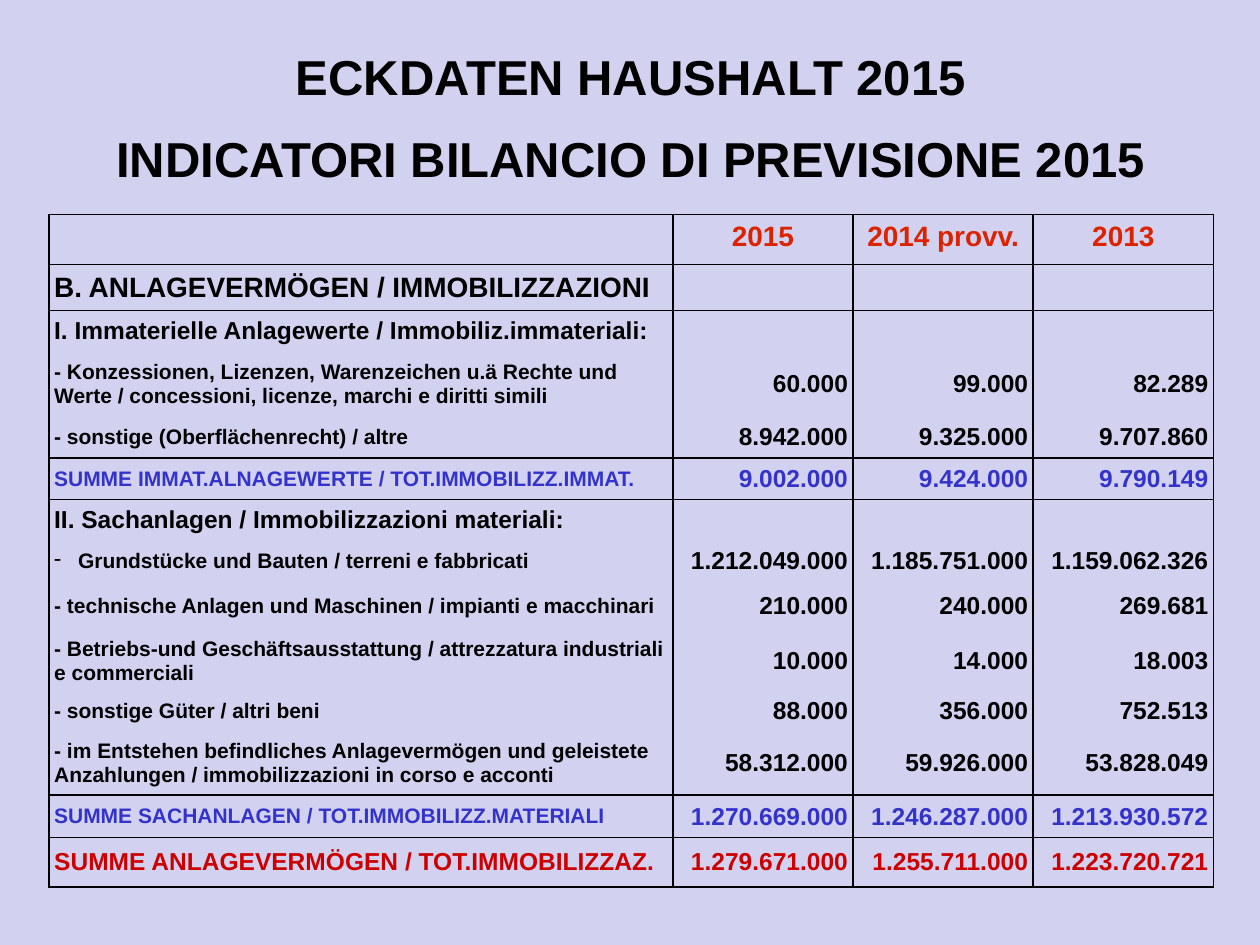
from dataclasses import dataclass

from lxml.etree import SubElement
from pptx import Presentation
from pptx.dml.color import RGBColor as Color
from pptx.enum.text import MSO_ANCHOR as Anchor, PP_ALIGN as Align
from pptx.oxml.ns import qn
from pptx.util import Inches, Pt


@dataclass(frozen=True)
class Theme:
    font: str = "Arial"
    background: str = "D2D2F0"
    ink: str = "000000"
    year: str = "DC2300"
    subtotal: str = "3333CC"
    total: str = "CC0000"
    title_size: int = 28
    heading_size: int = 16
    body_size: int = 14
    item_size: int = 12
    title_gap: int = 13
    border: float = 1
    cell_margin: float = 0.04
    dash_indent: float = 0.19


THEME = Theme()

# Row kind: (label size, colour, line above the row)
KINDS = {
    "years": (THEME.heading_size, THEME.year, True),
    "chapter": (THEME.heading_size, THEME.ink, True),
    "section": (THEME.body_size, THEME.ink, True),
    "item": (THEME.item_size, THEME.ink, False),
    "dash": (THEME.item_size, THEME.ink, False),
    "subtotal": (THEME.item_size, THEME.subtotal, True),
    "total": (THEME.body_size, THEME.total, True),
}

# Kind, height in percent of the slide, label, values for 2015, 2014 and 2013
ROWS = [
    ("years", 5.3, "", "2015", "2014 provv.", "2013"),
    ("chapter", 4.9, "B. ANLAGEVERMÖGEN / IMMOBILIZZAZIONI", "", "", ""),
    ("section", 4.4, "I. Immaterielle Anlagewerte / Immobiliz.immateriali:", "", "", ""),
    ("item", 6.8, "- Konzessionen, Lizenzen, Warenzeichen u.ä Rechte und Werte / "
     "concessioni, licenze, marchi e diritti simili", "60.000", "99.000", "82.289"),
    ("item", 4.4, "- sonstige (Oberflächenrecht) / altre",
     "8.942.000", "9.325.000", "9.707.860"),
    ("subtotal", 4.4, "SUMME IMMAT.ALNAGEWERTE / TOT.IMMOBILIZZ.IMMAT.",
     "9.002.000", "9.424.000", "9.790.149"),
    ("section", 4.4, "II. Sachanlagen / Immobilizzazioni materiali:", "", "", ""),
    ("dash", 4.3, "Grundstücke und Bauten / terreni e fabbricati",
     "1.212.049.000", "1.185.751.000", "1.159.062.326"),
    ("item", 5.2, "- technische Anlagen und Maschinen / impianti e macchinari",
     "210.000", "240.000", "269.681"),
    ("item", 6.4, "- Betriebs-und Geschäftsausstattung / attrezzatura industriali "
     "e commerciali", "10.000", "14.000", "18.003"),
    ("item", 4.2, "- sonstige Güter / altri beni", "88.000", "356.000", "752.513"),
    ("item", 6.8, "- im Entstehen befindliches Anlagevermögen und geleistete "
     "Anzahlungen / immobilizzazioni in corso e acconti",
     "58.312.000", "59.926.000", "53.828.049"),
    ("subtotal", 4.5, "SUMME SACHANLAGEN / TOT.IMMOBILIZZ.MATERIALI",
     "1.270.669.000", "1.246.287.000", "1.213.930.572"),
    ("total", 5.2, "SUMME ANLAGEVERMÖGEN / TOT.IMMOBILIZZAZ.",
     "1.279.671.000", "1.255.711.000", "1.223.720.721"),
]
COLUMNS = [49.5, 14.3, 14.3, 14.3]


class SlideBuilder:
    """Places elements by percent of the slide's width and height."""

    def __init__(self, presentation, theme):
        self.theme = theme
        self.width = presentation.slide_width
        self.height = presentation.slide_height
        self.slide = presentation.slides.add_slide(presentation.slide_layouts[6])
        fill = self.slide.background.fill
        fill.solid()
        fill.fore_color.rgb = Color.from_string(theme.background)

    def x(self, percent):
        return round(self.width * percent / 100)

    def y(self, percent):
        return round(self.height * percent / 100)

    def set_text(self, paragraph, text, size, color, align):
        if text:
            paragraph.text = text
        paragraph.alignment = align
        font = paragraph.font
        font.name, font.size, font.bold = self.theme.font, Pt(size), True
        font.color.rgb = Color.from_string(color)

    def title(self, lines, left, top, width, height):
        box = self.slide.shapes.add_textbox(
            self.x(left), self.y(top), self.x(width), self.y(height))
        frame = box.text_frame
        frame.word_wrap = True
        for index, line in enumerate(lines):
            paragraph = frame.add_paragraph() if index else frame.paragraphs[0]
            self.set_text(paragraph, line, self.theme.title_size, self.theme.ink, Align.CENTER)
            if index:
                paragraph.space_before = Pt(self.theme.title_gap)

    def table(self, rows, columns, left, top):
        table = self.slide.shapes.add_table(
            len(rows), len(columns), self.x(left), self.y(top),
            self.x(sum(columns)), self.y(sum(row[1] for row in rows))).table
        table.first_row = table.horz_banding = False
        for column, width in zip(table.columns, columns):
            column.width = self.x(width)
        ruled = [KINDS[row[0]][2] for row in rows] + [True]
        for row_index, (kind, height, *texts) in enumerate(rows):
            table.rows[row_index].height = self.y(height)
            for column_index, text in enumerate(texts):
                cell = table.cell(row_index, column_index)
                self.cell(cell, kind, text, column_index == 0)
                self.borders(cell, ruled[row_index], ruled[row_index + 1])

    def cell(self, cell, kind, text, is_label):
        size, color, _ = KINDS[kind]
        align = Align.LEFT if is_label else Align.RIGHT
        if kind == "years":
            align = Align.CENTER
        elif not is_label:
            size = self.theme.body_size
        if not text:
            size = self.theme.item_size
        margin = Inches(self.theme.cell_margin)
        cell.margin_left = cell.margin_right = margin
        cell.margin_top = cell.margin_bottom = margin
        cell.vertical_anchor = Anchor.MIDDLE
        cell.fill.background()
        paragraph = cell.text_frame.paragraphs[0]
        self.set_text(paragraph, text, size, color, align)
        if kind == "years" and text:
            paragraph.line_spacing = 0.81
            paragraph.space_before = Pt(8)
        if kind == "dash" and is_label:
            self.dash(paragraph)

    def dash(self, paragraph):
        properties = paragraph._p.get_or_add_pPr()
        indent = Inches(self.theme.dash_indent)
        properties.set("marL", str(indent))
        properties.set("indent", str(-indent))
        bullet = properties.makeelement(qn("a:buChar"), {"char": "-"})
        properties.insert(0, bullet)

    def borders(self, cell, above, below):
        properties = cell._tc.get_or_add_tcPr()
        edges = {"a:lnL": True, "a:lnR": True, "a:lnT": above, "a:lnB": below}
        for position, (tag, visible) in enumerate(edges.items()):
            line = properties.makeelement(qn(tag), {"w": str(Pt(self.theme.border))})
            properties.insert(position, line)
            if visible:
                fill = SubElement(line, qn("a:solidFill"))
                SubElement(fill, qn("a:srgbClr"), val=self.theme.ink)
            else:
                SubElement(line, qn("a:noFill"))


def main():
    presentation = Presentation()
    presentation.slide_width, presentation.slide_height = Inches(10), Inches(7.5)
    builder = SlideBuilder(presentation, THEME)

    # Bilingual title
    builder.title(["ECKDATEN HAUSHALT 2015", "INDICATORI BILANCIO DI PREVISIONE 2015"],
                  left=7.8, top=4.3, width=84.5, height=16.1)

    # Fixed assets by year
    builder.table(ROWS, COLUMNS, left=3.9, top=22.67)

    presentation.save("out.pptx")


if __name__ == "__main__":
    main()
